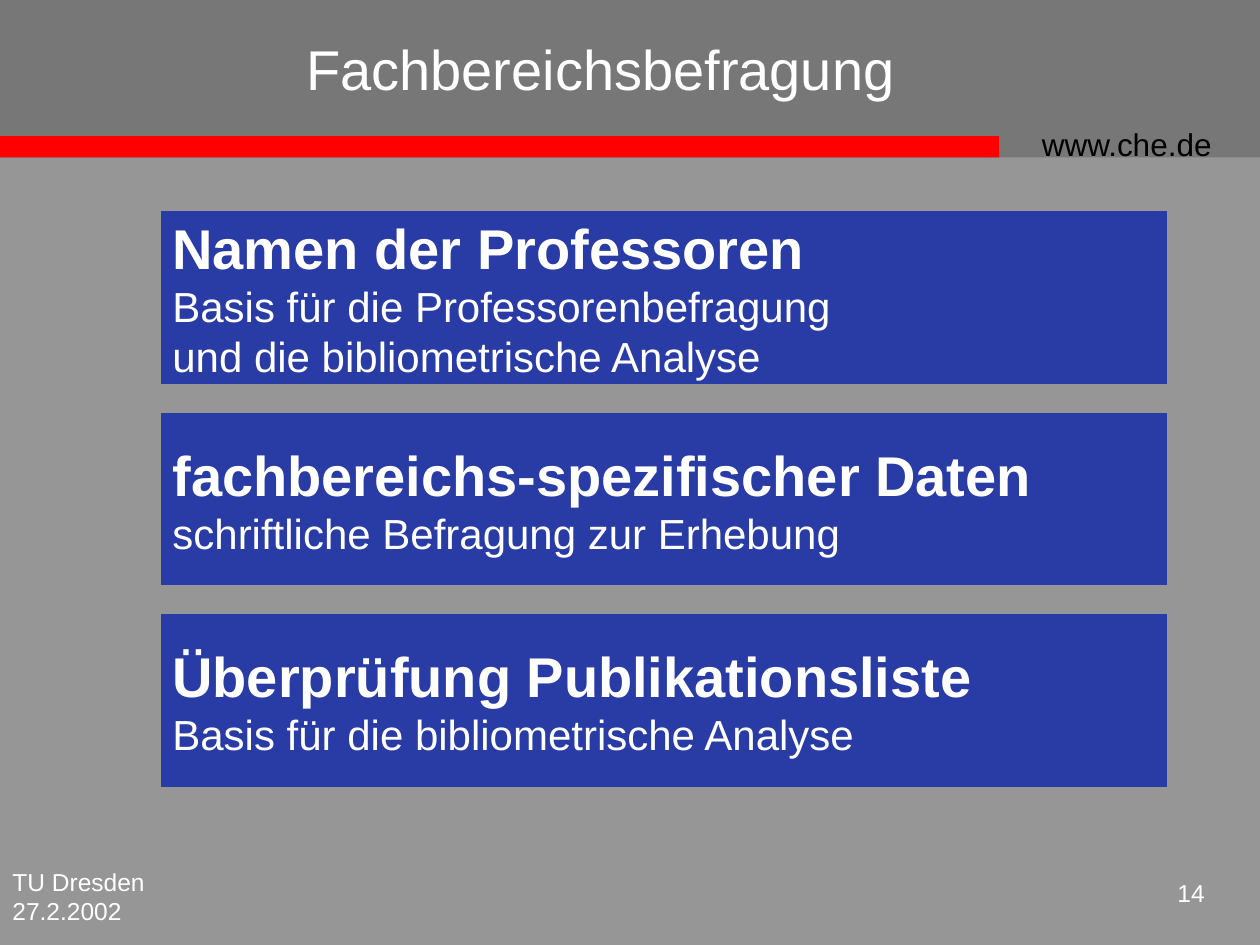
from dataclasses import dataclass

from pptx import Presentation
from pptx.dml.color import RGBColor
from pptx.enum.shapes import MSO_SHAPE
from pptx.enum.text import MSO_ANCHOR, PP_ALIGN
from pptx.util import Inches, Pt

RECTANGLE = MSO_SHAPE.RECTANGLE
MIDDLE = MSO_ANCHOR.MIDDLE
LEFT, RIGHT = PP_ALIGN.LEFT, PP_ALIGN.RIGHT


@dataclass(frozen=True)
class Theme:
    font: str = "Arial"
    background: RGBColor = RGBColor(0x96, 0x96, 0x96)
    header: RGBColor = RGBColor(0x77, 0x77, 0x77)
    accent: RGBColor = RGBColor(0xFF, 0x00, 0x00)
    panel: RGBColor = RGBColor(0x29, 0x3B, 0xA5)
    light: RGBColor = RGBColor(0xFF, 0xFF, 0xFF)
    dark: RGBColor = RGBColor(0x00, 0x00, 0x00)
    heading: int = 32
    body: int = 24
    address: int = 18
    footer: int = 14


THEME = Theme()


def add_block(left, top, width, height, color):
    block = slide.shapes.add_shape(
        RECTANGLE, Inches(left), Inches(top), Inches(width), Inches(height))
    block.shadow.inherit = False
    block.fill.solid()
    block.fill.fore_color.rgb = color
    block.line.fill.background()
    return block


def write(paragraph, text, size, color=THEME.light, bold=False, align=LEFT):
    paragraph.text = text
    paragraph.alignment = align
    formats = {"name": THEME.font, "size": Pt(size), "bold": bold}
    for run in paragraph.runs:
        for attribute, value in formats.items():
            setattr(run.font, attribute, value)
        run.font.color.rgb = color


prs = Presentation()
prs.slide_width, prs.slide_height = Inches(10), Inches(7.5)
slide = prs.slides.add_slide(prs.slide_layouts[5])
slide.background.fill.solid()
slide.background.fill.fore_color.rgb = THEME.background

# Header band, red bar and title
add_block(0, 0, 10, 1.25, THEME.header)
add_block(0, 1.08, 7.93, 0.17, THEME.accent)

title = slide.shapes.title
title.left, title.top = Inches(2.33), Inches(0)
title.width, title.height = Inches(5.5), Inches(1.08)
title.text_frame.vertical_anchor = MIDDLE
write(title.text_frame.paragraphs[0], "Fachbereichsbefragung", THEME.heading)
title.element.getparent().append(title.element)  # in front of the header band

# Web address, event and page number
labels = [
    ("www.che.de", (8.17, 0.94, 1.75, 0.4), THEME.address, THEME.dark, LEFT),
    ("TU Dresden 27.2.2002", (0, 6.83, 2.08, 0.5), THEME.footer, THEME.light, LEFT),
    ("14", (9.08, 6.92, 0.58, 0.42), THEME.footer, THEME.light, RIGHT),
]
for text, box, size, color, align in labels:
    label = slide.shapes.add_textbox(*map(Inches, box))
    label.text_frame.word_wrap = True
    write(label.text_frame.paragraphs[0], text, size, color, align=align)

# Survey parts, stacked at an equal pitch
PANEL_TOP, PANEL_PITCH = 1.67, 1.6
survey_parts = [
    ("Namen der Professoren",
     "Basis für die Professorenbefragung\vund die bibliometrische Analyse"),
    ("fachbereichs-spezifischer Daten", "schriftliche Befragung zur Erhebung"),
    ("Überprüfung Publikationsliste", "Basis für die bibliometrische Analyse"),
]
for row, (heading, detail) in enumerate(survey_parts):
    panel = add_block(1.27, PANEL_TOP + row * PANEL_PITCH, 8, 1.38, THEME.panel)
    panel.line.color.rgb = THEME.background
    panel.line.width = Pt(0.75)
    frame = panel.text_frame
    frame.word_wrap = True
    frame.vertical_anchor = MIDDLE
    write(frame.paragraphs[0], heading, THEME.heading, bold=True)
    write(frame.add_paragraph(), detail, THEME.body)

prs.save("out.pptx")
